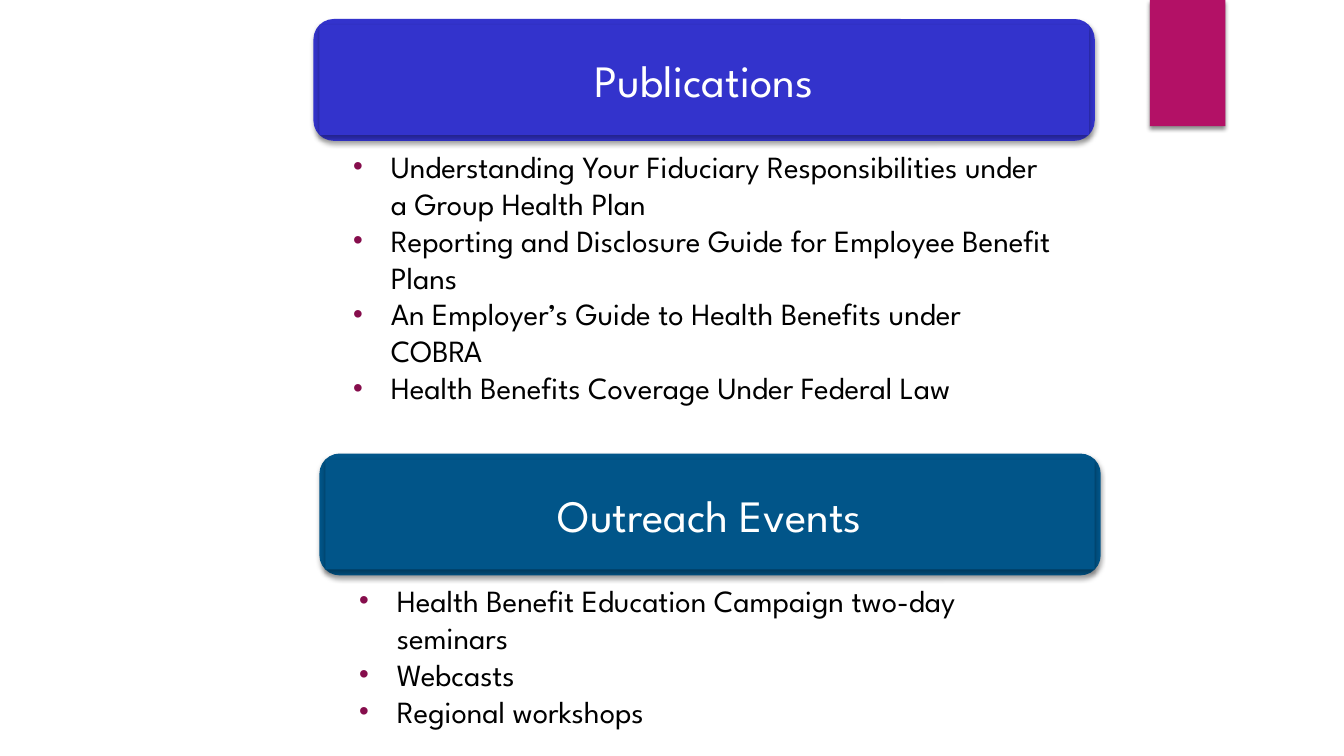
"""Build a slide with two headed lists: publications and outreach events."""
from lxml import etree
from pptx import Presentation
from pptx.dml.color import RGBColor
from pptx.enum import shapes, text
from pptx.oxml.ns import qn
from pptx.util import Cm, Pt

SECTIONS = [
    {"heading": "Publications", "color": "violet", "left": 7.9, "top": 0.48, "list_height": 7.77,
     "items": ["Understanding Your Fiduciary Responsibilities under a Group Health Plan",
               "Reporting and Disclosure Guide for Employee Benefit Plans",
               "An Employer’s Guide to Health Benefits under COBRA",
               "Health Benefits Coverage Under Federal Law"]},
    {"heading": "Outreach Events", "color": "blue", "left": 8.05, "top": 11.43, "list_height": 4.01,
     "items": ["Health Benefit Education Campaign two-day seminars",
               "Webcasts",
               "Regional workshops"]},
]
COLORS = {"violet": "3333CC", "blue": "015589", "ribbon": "B31166", "bullet": "860D4C",
          "black": "000000", "white": "FFFFFF"}
FONT = "League Spartan"
PANEL_WIDTH, PANEL_HEIGHT, PANEL_EDGE = 19.69, 3.07, 0.15
LIST_INDENT, LIST_DROP, LIST_WIDTH = 0.75, 3.11, 18.19
BULLET_HANG = 0.95


def add_shadow(shape, alpha, blur, distance):
    """Give a shape a soft black shadow straight below it."""
    shape.shadow.inherit = False
    effects = shape._element.spPr.find(qn("a:effectLst"))
    shadow = etree.SubElement(effects, qn("a:outerShdw"), blurRad=str(Pt(blur)),
                              dist=str(Pt(distance)), dir="5400000", algn="ctr", rotWithShape="0")
    color = etree.SubElement(shadow, qn("a:srgbClr"), val=COLORS["black"])
    etree.SubElement(color, qn("a:alpha"), val=str(alpha * 1000))


def add_block(page, kind, area, color, alpha=32, blur=3.5, distance=2.2):
    """Add a filled shape without outline; area is left, top, width, height in cm."""
    block = page.shapes.add_shape(kind, *map(Cm, area))
    block.fill.solid()
    block.fill.fore_color.rgb = RGBColor.from_string(COLORS[color])
    block.line.fill.background()
    add_shadow(block, alpha, blur, distance)
    return block


def add_bullet(para):
    """Give a paragraph a hanging round bullet."""
    properties = para._p.get_or_add_pPr()
    properties.set("marL", str(Cm(BULLET_HANG)))
    properties.set("indent", str(-Cm(BULLET_HANG)))
    color = etree.SubElement(properties, qn("a:buClr"))
    etree.SubElement(color, qn("a:srgbClr"), val=COLORS["bullet"])
    etree.SubElement(properties, qn("a:buSzPct"), val="90000")
    etree.SubElement(properties, qn("a:buFont"), typeface="Arial")
    etree.SubElement(properties, qn("a:buChar"), char="•")


def write(box, lines, size, color, align=text.PP_ALIGN.LEFT, anchor=text.MSO_ANCHOR.TOP,
          bulleted=False):
    """Write lines into a box, one paragraph each."""
    frame = box.text_frame
    frame.word_wrap = True
    frame.vertical_anchor = anchor
    for index, line in enumerate(lines):
        para = frame.paragraphs[0] if index == 0 else frame.add_paragraph()
        para.alignment = align
        if bulleted:
            add_bullet(para)
        span = para.add_run()
        span.text = line
        span.font.name = FONT
        span.font.size = Pt(size)
        span.font.color.rgb = RGBColor.from_string(COLORS[color])


def add_section(page, section):
    """Add a rounded heading panel with its bulleted list below."""
    left, top, color = section["left"], section["top"], section["color"]
    items = page.shapes.add_textbox(Cm(left + LIST_INDENT), Cm(top + LIST_DROP),
                                    Cm(LIST_WIDTH), Cm(section["list_height"]))
    write(items, section["items"], 22, "black", bulleted=True)
    add_block(page, shapes.MSO_SHAPE.ROUNDED_RECTANGLE,
              (left, top, PANEL_WIDTH, PANEL_HEIGHT), color)
    heading = add_block(page, shapes.MSO_SHAPE.RECTANGLE,
                        (left + PANEL_EDGE, top + PANEL_EDGE,
                         PANEL_WIDTH - 2 * PANEL_EDGE, PANEL_HEIGHT - 2 * PANEL_EDGE), color)
    heading.text_frame.margin_left = heading.text_frame.margin_right = Cm(0.46)
    heading.text_frame.margin_top = heading.text_frame.margin_bottom = Cm(0.23)
    write(heading, [section["heading"]], 32, "white", align=text.PP_ALIGN.CENTER,
          anchor=text.MSO_ANCHOR.MIDDLE)


def main():
    """Build and save the deck."""
    deck = Presentation()
    deck.slide_width, deck.slide_height = Cm(33.87), Cm(19.05)
    page = deck.slides.add_slide(deck.slide_layouts[6])
    add_block(page, shapes.MSO_SHAPE.RECTANGLE, (28.98, 0, 1.9, 3.18), "ribbon",
              alpha=45, blur=3, distance=2)
    for section in SECTIONS:
        add_section(page, section)
    deck.save("out.pptx")


if __name__ == "__main__":
    main()
